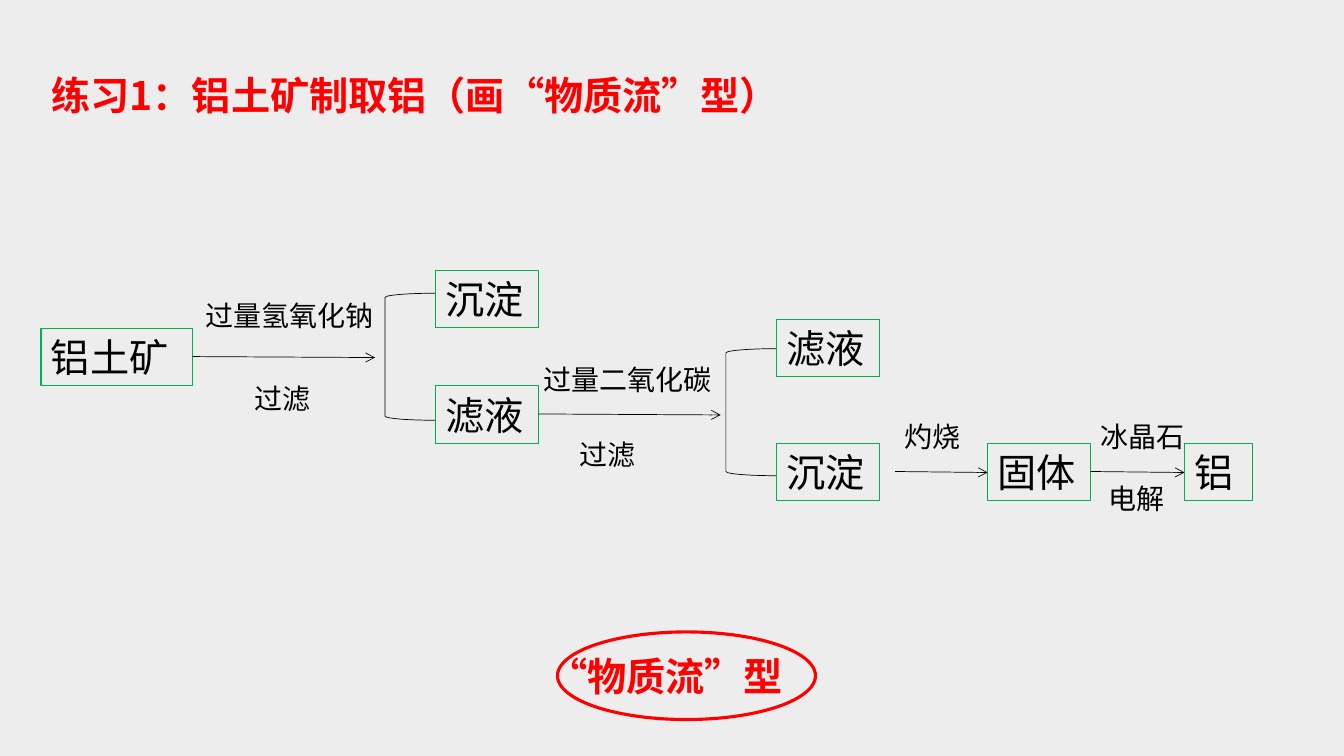
from lxml import etree
from pptx import Presentation
from pptx.dml.color import RGBColor
from pptx.enum import lang, shapes, text
from pptx.oxml import ns
from pptx.util import Pt

HUES = {"back": "EDEDED", "red": "FF0000", "green": "00B050", "ink": "000000"}
CJK = "Noto Sans CJK SC"
ROW = 41


def tint(name):
    """Return the named colour."""
    return RGBColor.from_string(HUES[name])


def write(shape, words, size=28, font="Calibri", hue="ink", bold=False, edge=False, space=None):
    """Put one formatted line of text in a shape."""
    frame = shape.text_frame
    frame.word_wrap = True
    frame.auto_size = text.MSO_AUTO_SIZE.NONE
    frame.vertical_anchor = text.MSO_ANCHOR.TOP
    frame.margin_left = frame.margin_right = Pt(7.2)
    frame.margin_top = frame.margin_bottom = Pt(3.6)
    para = frame.paragraphs[0]
    para.alignment = text.PP_ALIGN.LEFT
    if space:
        para.line_spacing = space
    run = para.add_run()
    run.text = words
    face = run.font
    face.name, face.size, face.bold = font, Pt(size), bold
    face.color.rgb = tint(hue)
    face.language_id = lang.MSO_LANGUAGE_ID.SIMPLIFIED_CHINESE
    props = run._r.get_or_add_rPr()
    etree.SubElement(props, ns.qn("a:ea")).set("typeface", CJK)
    if edge:
        line = etree.Element(ns.qn("a:ln"), w=str(Pt(0.75)))
        fill = etree.SubElement(line, ns.qn("a:solidFill"))
        etree.SubElement(fill, ns.qn("a:srgbClr")).set("val", HUES[hue])
        props.insert(0, line)


def draw(pen, kind, x, y, w, h, hue, width):
    """Add an unfilled outlined shape."""
    shape = pen.add_shape(kind, Pt(x), Pt(y), Pt(w), Pt(h))
    shape.shadow.inherit = False
    shape.fill.background()
    shape.line.color.rgb = tint(hue)
    shape.line.width = Pt(width)
    return shape


def node(pen, words, x, y, w=73.5):
    """Add a green box that names a substance."""
    box = draw(pen, shapes.MSO_SHAPE.RECTANGLE, x, y, w, ROW, "green", 0.75)
    write(box, words, edge=True)


def label(pen, words, x, y, w, h=32, **style):
    """Add a text box."""
    write(pen.add_textbox(Pt(x), Pt(y), Pt(w), Pt(h)), words, **style)


def step(pen, x, y, w, notes):
    """Draw an arrow and the notes placed relative to its start."""
    line = pen.add_connector(shapes.MSO_CONNECTOR.STRAIGHT, Pt(x), Pt(y), Pt(x + w), Pt(y + 0.7))
    line.line.color.rgb = tint("ink")
    line.line.width = Pt(0.5)
    etree.SubElement(line.line._get_or_add_ln(), ns.qn("a:tailEnd")).set("type", "arrow")
    etree.SubElement(line._element.spPr, ns.qn("a:effectLst"))
    for words, dx, dy, wide in notes:
        label(pen, words, x + dx, y + dy, wide, size=20, edge=True)


def split(pen, x, y, parts):
    """Draw a bracket with its two products."""
    draw(pen, shapes.MSO_SHAPE.LEFT_BRACKET, x, y, 36, 90.7, "ink", 0.5)
    for words, dy in parts:
        node(pen, words, x + 36.2, y + dy)


def flow(pen, x, y):
    """Draw the route from ore to metal, starting at the ore box."""
    node(pen, "铝土矿", x, y, 108.5)
    step(pen, x + 108.3, y + 20, 130.3,
         [("过量氢氧化钠", 2, -45.4, 137.5), ("过滤", 37.3, 14.4, 66)])
    split(pen, x + 245.7, y - 25.2, [("沉淀", -16.5), ("滤液", 66.2)])
    step(pen, x + 355.2, y + 61, 130.3,
         [("过量二氧化碳", -3.7, -40.4, 137.5), ("过滤", 22.3, 13, 66)])
    split(pen, x + 489.2, y + 14.4, [("沉淀", 67.7), ("滤液", -20.9)])
    last = y + 82.1
    step(pen, x + 610, last + 20, 66.2, [("灼烧", 0, -41, 66)])
    node(pen, "固体", x + 676.3, last)
    step(pen, x + 749.8, last + 20, 67,
         [("冰晶石", 0, -41, 78), ("电解", 5.8, 3.6, 66)])
    node(pen, "铝", x + 816.7, last, 49)


def badge(pen, x, y, w, h):
    """Draw the ringed name of the flow type."""
    group = pen.add_group_shape().shapes
    label(group, "“物质流”型", x - 13.7, y + 10.8, 270.7, ROW, hue="red", bold=True)
    draw(group, shapes.MSO_SHAPE.OVAL, x, y, w, h, "red", 2.25)


def head(slide, x, y, w, h):
    """Place and fill the title."""
    title = slide.shapes.title
    title.left, title.top, title.width, title.height = Pt(x), Pt(y), Pt(w), Pt(h)
    write(title, "练习1：铝土矿制取铝（画“物质流”型）", font=CJK, hue="red", bold=True, space=1.5)


def main():
    """Build the slide and save it."""
    deck = Presentation()
    deck.slide_width, deck.slide_height = Pt(960), Pt(540)
    slide = deck.slides.add_slide(deck.slide_layouts[5])
    slide.background.fill.solid()
    slide.background.fill.fore_color.rgb = tint("back")
    head(slide, 29.5, 30.2, 692, 58.3)
    badge(slide.shapes, 398.2, 451.4, 184.3, 62.6)
    flow(slide.shapes, 29.3, 234.7)
    deck.save("out.pptx")


if __name__ == "__main__":
    main()
